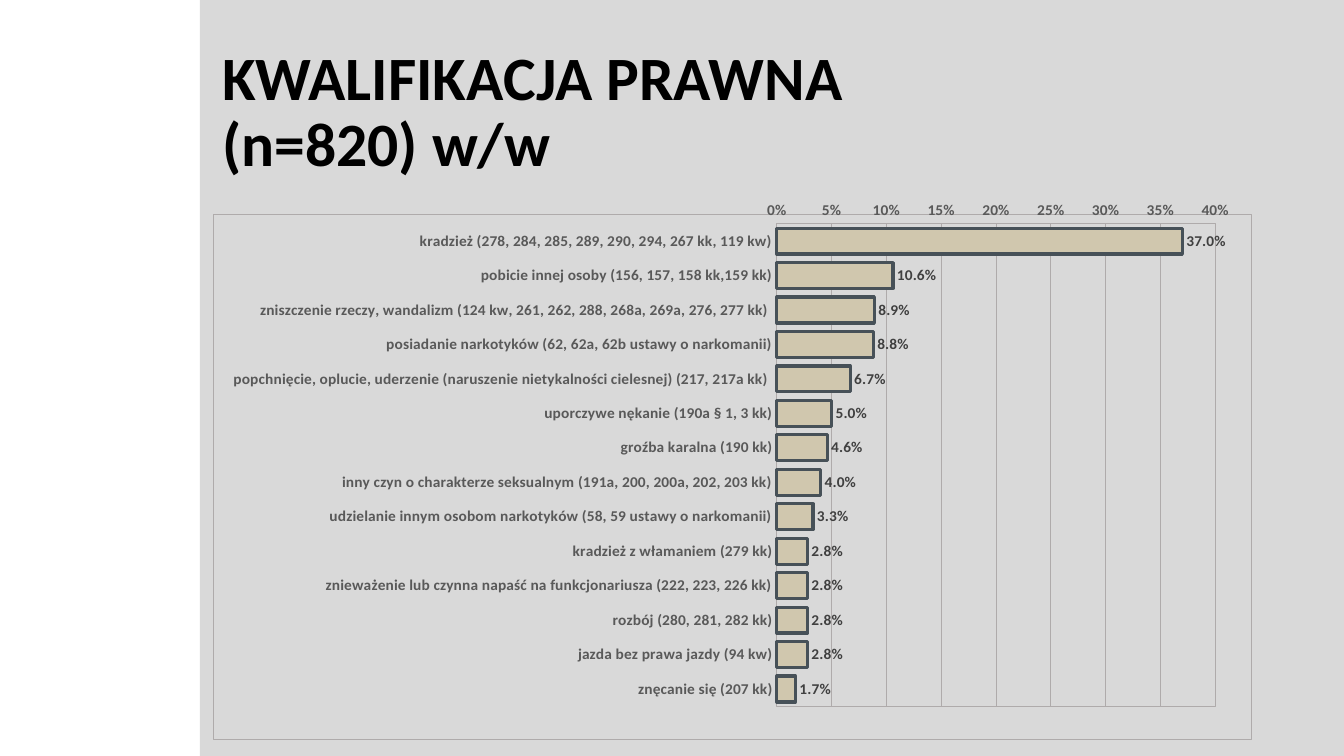
from lxml import etree
from pptx import Presentation
from pptx.chart.data import CategoryChartData
from pptx.dml.color import RGBColor
from pptx.enum.chart import (XL_AXIS_CROSSES, XL_CHART_TYPE, XL_LABEL_POSITION,
                             XL_TICK_MARK)
from pptx.enum.shapes import MSO_SHAPE
from pptx.enum.text import MSO_ANCHOR
from pptx.oxml import parse_xml
from pptx.oxml.ns import nsdecls, qn
from pptx.util import Cm, Pt

FONT = "Calibri"
BLACK = RGBColor(0x00, 0x00, 0x00)
PANEL_GREY = RGBColor(0xD9, 0xD9, 0xD9)
LINE_GREY = RGBColor(0xAF, 0xAB, 0xAB)
AXIS_TEXT = RGBColor(0x59, 0x59, 0x59)
LABEL_TEXT = RGBColor(0x40, 0x40, 0x40)
BAR_FILL = RGBColor(0xD0, 0xC7, 0xAE)
BAR_LINE = RGBColor(0x47, 0x51, 0x58)

OFFENCES = [
    ("kradzież (278, 284, 285, 289, 290, 294, 267 kk, 119 kw)", 0.37),
    ("pobicie innej osoby (156, 157, 158 kk,159 kk)", 0.106),
    ("zniszczenie rzeczy, wandalizm (124 kw, 261, 262, 288, 268a, 269a, 276, 277 kk) ", 0.089),
    ("posiadanie narkotyków (62, 62a, 62b ustawy o narkomanii)", 0.088),
    ("popchnięcie, oplucie, uderzenie (naruszenie nietykalności cielesnej) (217, 217a kk) ", 0.067),
    ("uporczywe nękanie (190a § 1, 3 kk)", 0.05),
    ("groźba karalna (190 kk)", 0.046),
    ("inny czyn o charakterze seksualnym (191a, 200, 200a, 202, 203 kk)", 0.04),
    ("udzielanie innym osobom narkotyków (58, 59 ustawy o narkomanii)", 0.033),
    ("kradzież z włamaniem (279 kk)", 0.028),
    ("znieważenie lub czynna napaść na funkcjonariusza (222, 223, 226 kk)", 0.028),
    ("rozbój (280, 281, 282 kk)", 0.028),
    ("jazda bez prawa jazdy (94 kw)", 0.028),
    ("znęcanie się (207 kk)", 0.017),
]


def set_font(font, color, size=11):
    font.name, font.size, font.bold = FONT, Pt(size), True
    font.color.rgb = color


def set_line(line, color, width=0.75):
    line.color.rgb = color
    line.width = Pt(width)


def write_lines(paragraph, lines, **font_format):
    """Write the lines into one paragraph, parted by line breaks."""
    for number, line in enumerate(lines):
        if number:
            paragraph.add_line_break()
        run = paragraph.add_run()
        run.text = line
        set_font(run.font, **font_format)


def add_panel(slide, left, top, width, height):
    panel = slide.shapes.add_shape(MSO_SHAPE.RECTANGLE, left, top, width, height)
    panel.shadow.inherit = False
    panel.fill.solid()
    panel.fill.fore_color.rgb = PANEL_GREY
    panel.line.fill.background()


def add_title(slide, left, top, width, height):
    frame = slide.shapes.add_textbox(left, top, width, height).text_frame
    frame.word_wrap = True
    frame.vertical_anchor = MSO_ANCHOR.MIDDLE
    heading = frame.paragraphs[0]
    heading.line_spacing = 0.9
    write_lines(heading, ["KWALIFIKACJA PRAWNA ", "(n=820) w/w"], color=BLACK, size=44)


def outline_properties():
    return parse_xml(
        f'<c:spPr {nsdecls("c", "a")}><a:noFill/><a:ln w="{Pt(0.75)}"><a:solidFill>'
        f'<a:srgbClr val="{LINE_GREY}"/></a:solidFill></a:ln></c:spPr>')


def place_plot(plot_area, **fractions):
    """Fix the inner plot area at fractions of the chart's size."""
    for old_layout in plot_area.findall(qn("c:layout")):
        plot_area.remove(old_layout)
    layout = etree.Element(qn("c:layout"))
    manual = etree.SubElement(layout, qn("c:manualLayout"))
    settings = {"layoutTarget": "inner", "xMode": "edge", "yMode": "edge", **fractions}
    for tag, value in settings.items():
        etree.SubElement(manual, qn(f"c:{tag}")).set("val", str(value))
    plot_area.insert(0, layout)


def format_axes(chart):
    offences, shares = chart.category_axis, chart.value_axis
    for axis in (offences, shares):
        axis.major_tick_mark = axis.minor_tick_mark = XL_TICK_MARK.NONE
        set_font(axis.tick_labels.font, AXIS_TEXT)
        set_line(axis.format.line, LINE_GREY)
    offences.reverse_order = True
    offences.crosses = XL_AXIS_CROSSES.MAXIMUM
    shares.minimum_scale, shares.maximum_scale, shares.major_unit = 0, 0.4, 0.05
    shares.tick_labels.number_format = "0%"
    shares.tick_labels.number_format_is_linked = False
    shares.has_major_gridlines = True
    set_line(shares.major_gridlines.format.line, LINE_GREY)


def format_bars(plot):
    plot.gap_width = 33
    plot.vary_by_categories = False
    bars = plot.series[0]
    bars.format.fill.solid()
    bars.format.fill.fore_color.rgb = BAR_FILL
    set_line(bars.format.line, BAR_LINE, 2.25)
    labels = bars.data_labels
    labels.show_value = True
    labels.position = XL_LABEL_POSITION.OUTSIDE_END
    labels.number_format = "0.0%"
    labels.number_format_is_linked = False
    set_font(labels.font, LABEL_TEXT)


def add_offence_chart(slide, left, top, width, height):
    data = CategoryChartData(number_format="0.0%")
    data.categories = [offence for offence, _ in OFFENCES]
    data.add_series("Series 1", [share for _, share in OFFENCES])
    chart = slide.shapes.add_chart(
        XL_CHART_TYPE.BAR_CLUSTERED, left, top, width, height, data).chart
    chart.has_title = chart.has_legend = False
    set_font(chart.font, BLACK)
    format_axes(chart)
    format_bars(chart.plots[0])

    chart_space = chart.element
    chart_space.find(qn("c:chart")).addnext(outline_properties())
    plot_area = chart_space.find(f'{qn("c:chart")}/{qn("c:plotArea")}')
    plot_area.append(outline_properties())
    place_plot(plot_area, x=Cm(14.22) / width, y=Cm(0.24) / height,
               w=Cm(11.06) / width, h=Cm(12.47) / height)


def main():
    deck = Presentation()
    deck.slide_width, deck.slide_height = Cm(33.87), Cm(19.05)
    slide = deck.slides.add_slide(deck.slide_layouts[6])
    left, width = Cm(5.36), Cm(26.19)
    add_panel(slide, Cm(5.04), Cm(-0.05), Cm(28.83), Cm(19.1))
    add_title(slide, left, Cm(1.02), width, Cm(3.68))
    add_offence_chart(slide, left, Cm(5.08), width, Cm(13.56))
    deck.save("out.pptx")


if __name__ == "__main__":
    main()
